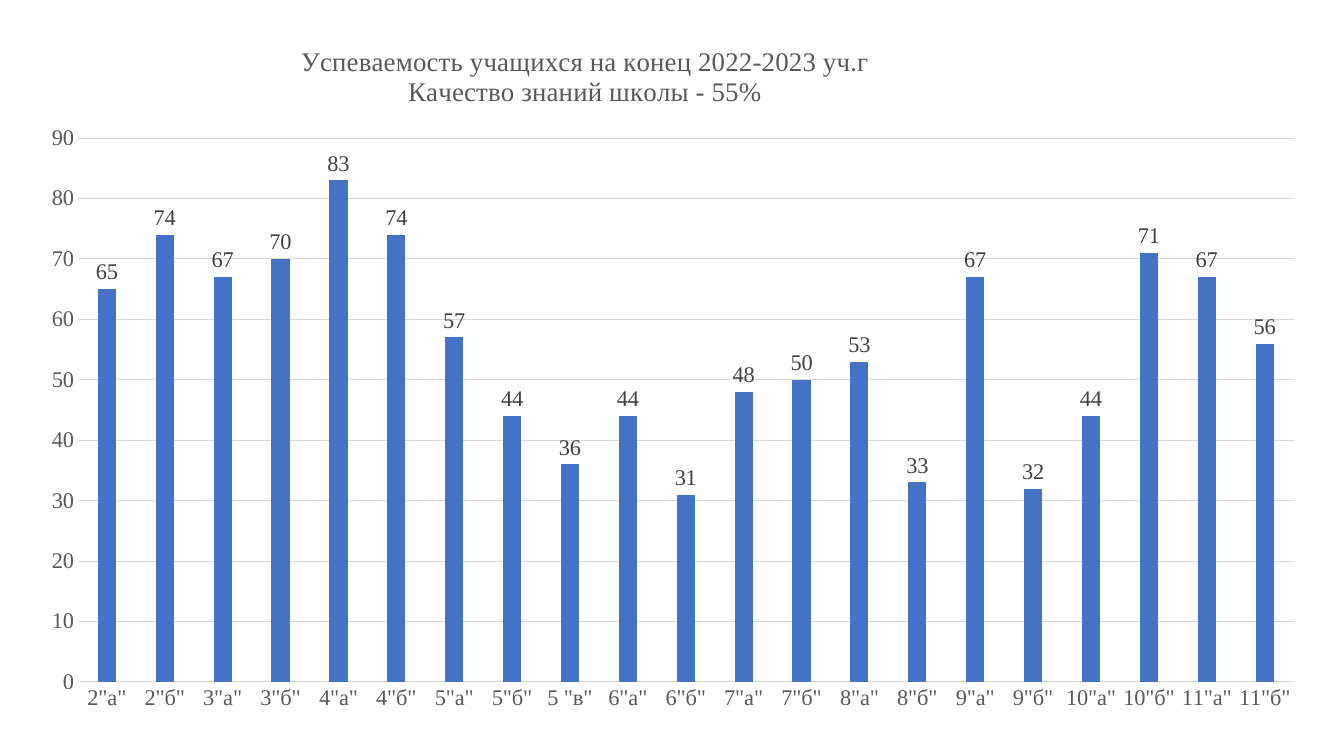
from dataclasses import dataclass

from lxml import etree
from pptx import Presentation
from pptx import util as u
from pptx.chart import data as chart_data
from pptx.dml import color
from pptx.enum import chart as chart_enum
from pptx.oxml import ns


@dataclass(frozen=True)
class Theme:
    font: str = "Times New Roman"
    title_size: float = 19.2
    label_size: float = 16
    bar: str = "4472C4"
    muted: str = "595959"
    value: str = "404040"
    grid: str = "D9D9D9"


THEME = Theme()

TITLE = (
    "Успеваемость учащихся на конец 2022-2023 уч.г",
    "Качество знаний школы - 55%",
)
QUALITY_BY_CLASS = {
    '2"а"': 65, '2"б"': 74, '3"а"': 67, '3"б"': 70, '4"а"': 83, '4"б"': 74,
    '5"а"': 57, '5"б"': 44, '5 "в"': 36, '6"а"': 44, '6"б"': 31,
    '7"а"': 48, '7"б"': 50, '8"а"': 53, '8"б"': 33, '9"а"': 67, '9"б"': 32,
    '10"а"': 44, '10"б"': 71, '11"а"': 67, '11"б"': 56,
}


def style_font(font, size, rgb):
    font.name = THEME.font
    font.size = u.Pt(size)
    font.bold = False
    font.color.rgb = color.RGBColor.from_string(rgb)


def style_line(line):
    line.color.rgb = color.RGBColor.from_string(THEME.grid)
    line.width = u.Pt(0.75)


def set_layout(element, position, **settings):
    """Fix a chart part at fractions of the chart area."""
    for existing in element.findall(ns.qn("c:layout")):
        element.remove(existing)
    layout = etree.Element(ns.qn("c:layout"))
    manual = etree.SubElement(layout, ns.qn("c:manualLayout"))
    for name, setting in settings.items():
        etree.SubElement(manual, ns.qn(f"c:{name}")).set("val", str(setting))
    element.insert(position, layout)


def add_title(chart):
    title = chart.chart_title
    frame = title.text_frame
    frame.text = "\n".join(TITLE)
    for paragraph in frame.paragraphs:
        style_font(paragraph.font, THEME.title_size, THEME.muted)
        for run in paragraph.runs:
            style_font(run.font, THEME.title_size, THEME.muted)
    set_layout(title._element, 1, xMode="edge", yMode="edge", x=0.21, y=0.03)


def style_axes(chart):
    for axis in (chart.category_axis, chart.value_axis):
        axis.major_tick_mark = chart_enum.XL_TICK_MARK.NONE
        axis.minor_tick_mark = chart_enum.XL_TICK_MARK.NONE
        style_font(axis.tick_labels.font, THEME.label_size, THEME.muted)
    style_line(chart.category_axis.format.line)

    value_axis = chart.value_axis
    value_axis.minimum_scale, value_axis.maximum_scale = 0, 90
    value_axis.major_unit = 10
    value_axis.format.line.fill.background()
    style_line(value_axis.major_gridlines.format.line)


def style_bars(plot):
    plot.gap_width, plot.overlap = 219, -27
    plot.vary_by_categories = False
    fill = plot.series[0].format.fill
    fill.solid()
    fill.fore_color.rgb = color.RGBColor.from_string(THEME.bar)

    # Values above the bars
    labels = plot.series[0].data_labels
    labels.show_value = True
    labels.position = chart_enum.XL_LABEL_POSITION.OUTSIDE_END
    style_font(labels.font, THEME.label_size, THEME.value)


def add_quality_chart(slide, left, top, width, height):
    data = chart_data.CategoryChartData()
    data.categories = list(QUALITY_BY_CLASS)
    data.add_series("Series 1", list(QUALITY_BY_CLASS.values()))
    chart = slide.shapes.add_chart(
        chart_enum.XL_CHART_TYPE.COLUMN_CLUSTERED,
        u.Pt(left), u.Pt(top), u.Pt(width), u.Pt(height), data,
    ).chart
    chart.has_legend = False
    chart.font.name = THEME.font
    chart.font.size = u.Pt(THEME.label_size)
    add_title(chart)
    style_axes(chart)
    style_bars(chart.plots[0])

    # Plot area inside the axis labels
    plot_area = chart._chartSpace.chart.plotArea
    set_layout(plot_area, 0, layoutTarget="inner", xMode="edge", yMode="edge",
               x=0.04, y=0.166, w=0.94, h=0.772)


def main():
    presentation = Presentation()
    presentation.slide_width, presentation.slide_height = u.Pt(960), u.Pt(540)
    slide = presentation.slides.add_slide(presentation.slide_layouts[6])
    add_quality_chart(slide, 18.7, 15.1, 923.8, 503.3)
    presentation.save("out.pptx")


if __name__ == "__main__":
    main()
